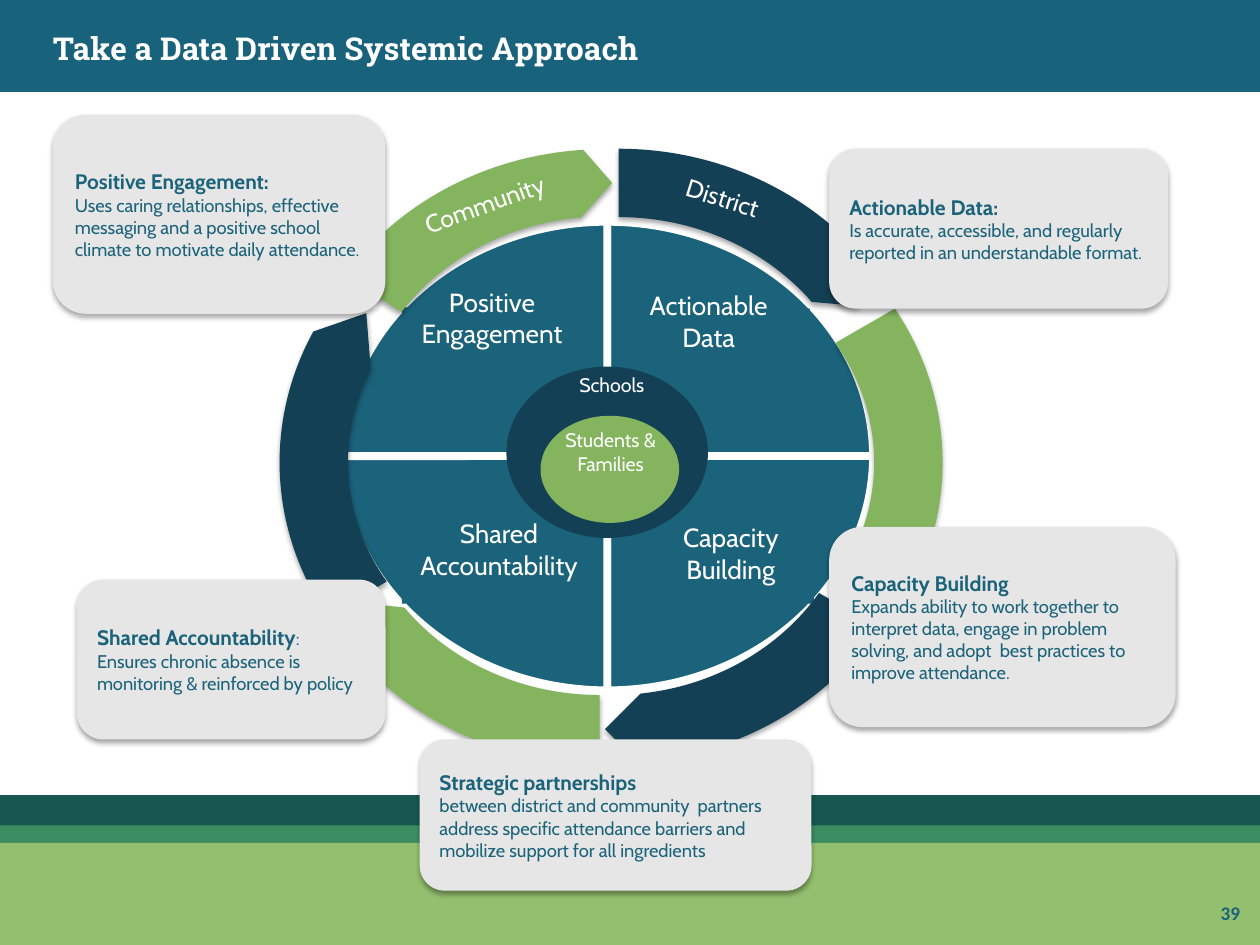
from lxml.etree import SubElement
from pptx import Presentation
from pptx.dml.color import RGBColor
from pptx.enum.shapes import MSO_SHAPE
from pptx.enum.text import MSO_ANCHOR, MSO_AUTO_SIZE, PP_ALIGN
from pptx.oxml.ns import qn
from pptx.util import Pt

TEAL, NAVY, GREEN, WHITE, GREY = "1B637A", "144056", "84B45E", "FFFFFF", "E6E6E6"

BANDS = [
    (450.7, 25.2, "165751"),
    (0, 55.4, "18637B"),
    (52.6, 401.7, WHITE),
    (471.6, 12.2, "3B8D61"),
    (481.7, 58.3, "94BF6E"),
]
QUADRANTS = [
    (162, 0, 350.6, 176.4),
    (0, 54, 352.8, 265),
    (54, 108, 229.7, 265),
    (108, 162, 229.7, 175.7),
]
RING_ARROWS = [
    (174.2, 85, NAVY, (0.119, 3.275, 195.321, 162.003, 0.059)),
    (180, 98.6, GREEN, (0.119, 3.275, 14.812, 198, 0.059)),
    (170.6, 105.1, NAVY, (0.119, 4.649, 50.33, 18, 0.059)),
    (163.4, 105.1, GREEN, (0.119, 3.275, 87.833, 54.003, 0.059)),
    (159.8, 98.6, NAVY, (0.119, 5.567, 122.402, 90, 0.059)),
    (165.6, 85, GREEN, (0.116, 4.098, 159.064, 127.236, 0.059)),
]
QUADRANT_LABELS = [
    ("Actionable Data", (360.7, 162, 88.6, 43.9)),
    ("Positive Engagement", (231.1, 159.8, 100.1, 43.9)),
    ("Capacity Building", (377.3, 294.5, 80.6, 43.9)),
    ("Shared Accountability", (229, 292.3, 112.3, 43.9)),
]
RING_LABELS = [
    ("Community", (211.7, 104.4, 130.3, 24.5), -19.6),
    ("District", (347.8, 100.8, 130.3, 24.5), 17.3),
]
CARDS = [
    ((473.8, 85, 193.7, 91.4), "Actionable Data:", "",
     "Is accurate, accessible, and regularly reported in an understandable format."),
    ((473.8, 301, 198, 114.5), "Capacity Building", "",
     "Expands ability to work together to interpret data, engage in problem solving, "
     "and adopt  best practices to improve attendance."),
    ((30.2, 65.5, 190.1, 113.8), "Positive Engagement:", "",
     "Uses caring relationships, effective messaging and a positive school climate "
     "to motivate daily attendance."),
    ((43.9, 331.2, 176.4, 91.4), "Shared Accountability", ":",
     "Ensures chronic absence is monitoring & reinforced by policy"),
]
PARTNERSHIP_CARD = (
    (239.8, 422.6, 223.9, 86.4), "Strategic partnerships", "",
    "between district and community  partners  address specific attendance barriers "
    "and mobilize support for all ingredients")


def color(value):
    """Turn a hex string into a colour."""
    return RGBColor.from_string(value)


def set_values(target, values):
    """Set each named attribute of the target."""
    for name, value in values.items():
        setattr(target, name, value)


def add_run(paragraph, text, size, fill, bold=False, font="Cabin"):
    """Add a formatted run to a paragraph."""
    run = paragraph.add_run()
    run.text = text
    set_values(run.font, {"size": Pt(size), "bold": bold, "name": font})
    run.font.color.rgb = color(fill)


def add_figure(shapes, kind, box, fill, adjustments=(), outline=None):
    """Add a filled preset shape with an optional outline width."""
    shape = shapes.add_shape(kind, *map(Pt, box))
    shape.shadow.inherit = False
    shape.fill.solid()
    shape.fill.fore_color.rgb = color(fill)
    for index, value in enumerate(adjustments):
        shape.adjustments[index] = value
    if outline:
        shape.line.color.rgb = color(WHITE)
        shape.line.width = Pt(outline)
    else:
        shape.line.fill.background()
    return shape


def add_shadow(shape):
    """Give a shape a soft shadow straight below it."""
    effects = shape.element.spPr.find(qn("a:effectLst"))
    shadow = SubElement(effects, qn("a:outerShdw"), blurRad=str(Pt(3.1)),
                        dist=str(Pt(1.8)), dir="5400000", rotWithShape="0")
    black = SubElement(shadow, qn("a:srgbClr"), val="000000")
    SubElement(black, qn("a:alpha"), val="35000")


def add_label(shapes, text, box, size, fill=WHITE, rotation=0,
              alignment=PP_ALIGN.CENTER, bold=False, font="Cabin"):
    """Add a wrapped text box holding one paragraph."""
    label = shapes.add_textbox(*map(Pt, box))
    label.rotation = rotation
    label.text_frame.word_wrap = True
    paragraph = label.text_frame.paragraphs[0]
    paragraph.alignment = alignment
    add_run(paragraph, text, size, fill, bold, font)


def add_card(shapes, box, heading, suffix, body):
    """Add a rounded card with a bold heading above its body text."""
    card = add_figure(shapes, MSO_SHAPE.ROUNDED_RECTANGLE, box, GREY)
    add_shadow(card)
    frame = card.text_frame
    set_values(frame, {"word_wrap": True, "vertical_anchor": MSO_ANCHOR.MIDDLE})
    first, second = frame.paragraphs[0], frame.add_paragraph()
    first.alignment = second.alignment = PP_ALIGN.LEFT
    add_run(first, heading, 12, TEAL, bold=True)
    if suffix:
        add_run(first, suffix, 10.5, TEAL)
    add_run(second, body, 10.5, TEAL)


def add_wheel(shapes):
    """Add the four quadrants as one group."""
    wheel = shapes.add_group_shape().shapes
    for start, end, left, top in QUADRANTS:
        add_figure(wheel, MSO_SHAPE.PIE, (195.1, 126.7, 303.8, 267.8), TEAL,
                   (start, end), outline=4.5)
        add_figure(wheel, MSO_SHAPE.RECTANGLE, (left, top, 112.3, 79.9), TEAL)


def add_hub(shapes):
    """Add the nested ellipses at the centre as one group."""
    hub = shapes.add_group_shape().shapes
    add_figure(hub, MSO_SHAPE.OVAL, (289.4, 209.5, 115.2, 97.9), NAVY)
    add_figure(hub, MSO_SHAPE.OVAL, (308.9, 237.6, 79.2, 61.2), GREEN)
    add_label(hub, "Students & Families", (315.4, 241.2, 67, 34.6), 11.2)
    add_label(hub, "Schools", (316.1, 209.5, 67, 20.9), 11.2)


def add_title(slide, text):
    """Place and format the title, in front of the header band."""
    title = slide.shapes.title
    set_values(title, {"left": Pt(23), "top": Pt(0), "width": Pt(403.9), "height": Pt(54.7)})
    frame = title.text_frame
    set_values(frame, {
        "word_wrap": True, "auto_size": MSO_AUTO_SIZE.NONE,
        "vertical_anchor": MSO_ANCHOR.MIDDLE,
        "margin_left": Pt(7.2), "margin_right": Pt(7.2),
        "margin_top": Pt(7.2), "margin_bottom": Pt(7.2)})
    frame.paragraphs[0].alignment = PP_ALIGN.LEFT
    add_run(frame.paragraphs[0], text, 18, WHITE, True, "Roboto Slab")
    title.element.getparent().append(title.element)


def main():
    """Build the slide and save it."""
    presentation = Presentation()
    set_values(presentation, {"slide_width": Pt(720), "slide_height": Pt(540)})
    slide = presentation.slides.add_slide(presentation.slide_layouts[5])
    shapes = slide.shapes
    for top, height, fill in BANDS:
        add_figure(shapes, MSO_SHAPE.RECTANGLE, (0, top, 720, height), fill)
    add_label(shapes, "39", (690.5, 511.2, 36, 20.9), 11, TEAL,
              alignment=PP_ALIGN.LEFT, bold=True, font="Calibri")
    add_wheel(shapes)
    for left, top, fill, adjustments in RING_ARROWS:
        add_shadow(add_figure(shapes, MSO_SHAPE.CIRCULAR_ARROW,
                              (left, top, 358.6, 331.2), fill, adjustments))
    add_hub(shapes)
    for text, box in QUADRANT_LABELS:
        add_label(shapes, text, box, 15)
    for card in CARDS:
        add_card(shapes, *card)
    for text, box, rotation in RING_LABELS:
        add_label(shapes, text, box, 14.2, rotation=rotation)
    add_card(shapes, *PARTNERSHIP_CARD)
    add_title(slide, "Take a Data Driven Systemic Approach")
    presentation.save("out.pptx")


if __name__ == "__main__":
    main()
